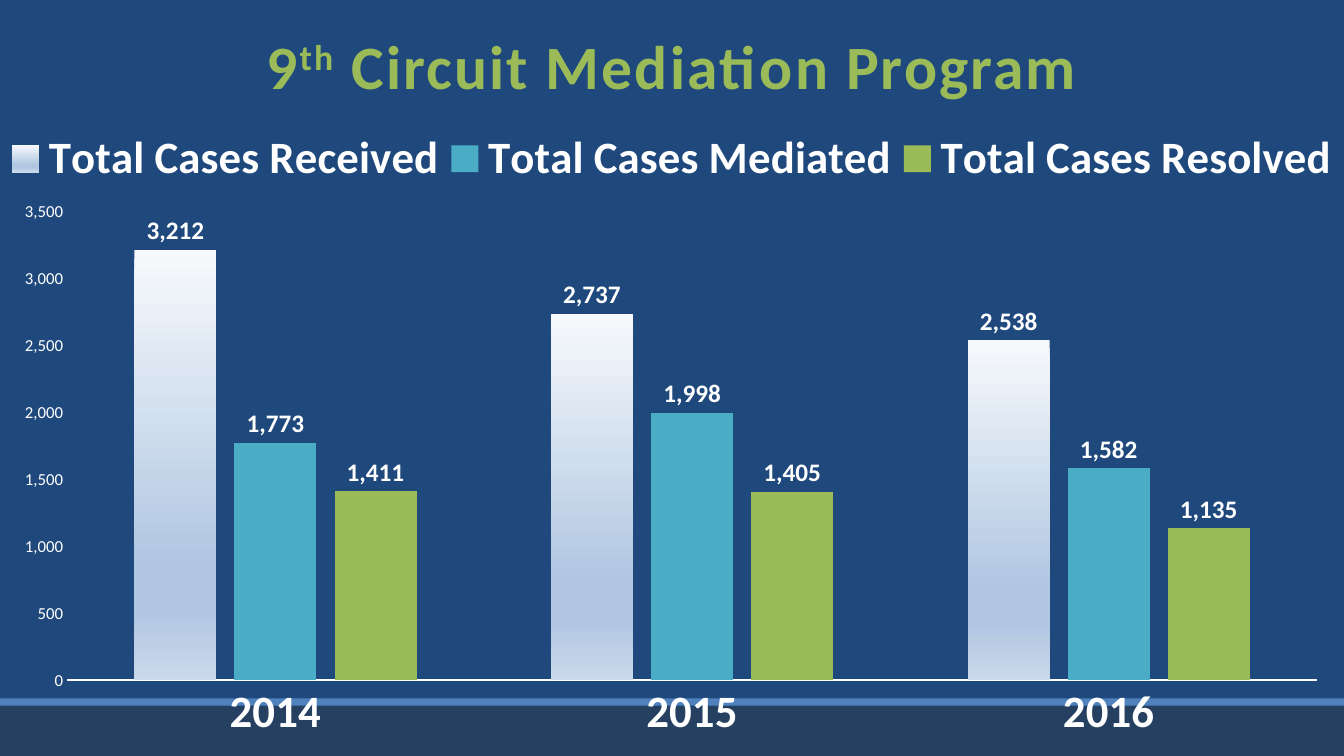
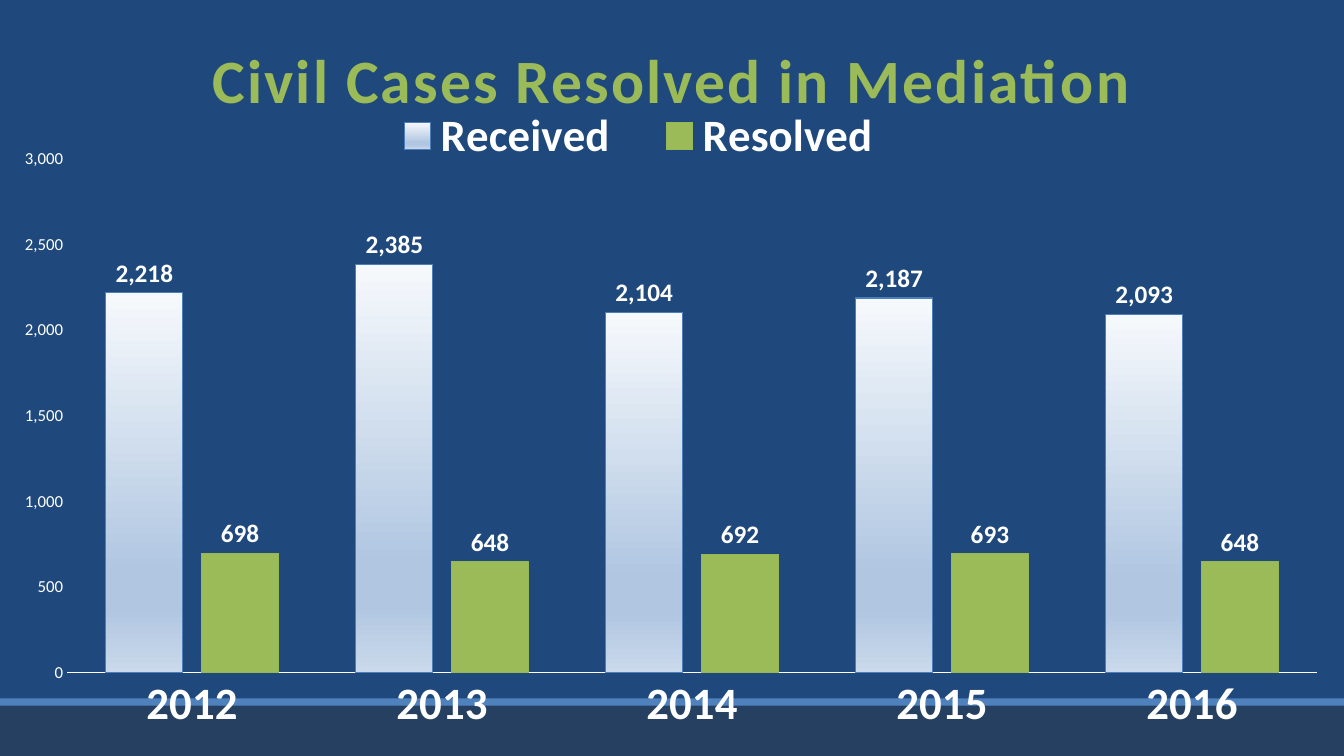
from dataclasses import dataclass
from typing import Optional

from lxml.etree import SubElement
from pptx import Presentation
from pptx.chart.data import CategoryChartData as ChartData
from pptx.dml.color import RGBColor
from pptx.enum.chart import XL_CHART_TYPE as Kind, XL_LABEL_POSITION as Pos
from pptx.enum.chart import XL_LEGEND_POSITION as Side, XL_TICK_MARK as Tick
from pptx.enum.shapes import MSO_SHAPE as Shape
from pptx.enum.text import MSO_ANCHOR as Anchor, PP_ALIGN as Align
from pptx.oxml.ns import qn
from pptx.util import Inches, Pt

# Shared look
WIDE, HIGH = 13.33, 7.5
FONT = "Calibri"
NAVY, DARK, BLUE = "1F497D", "254061", "4F81BD"
WHITE, GREEN, TEAL = "FFFFFF", "9BBB59", "4BACC6"
FADE = ((0, "F6F9FC"), (74, "B0C6E1"), (83, "B0C6E1"), (100, "CAD9EB"))

TITLE = dict(name=FONT, size=Pt(44), bold=True, color=GREEN)
BASE = dict(name=FONT, size=Pt(10), color=WHITE)
LARGE = dict(name=FONT, size=Pt(32), bold=True, color=WHITE)
SCALE = dict(name=FONT, size=Pt(12), bold=False, color=WHITE)
LABEL = dict(name=FONT, size=Pt(18), bold=True, color=WHITE)


@dataclass
class Band:
    top: float
    high: float
    color: str


@dataclass
class Series:
    name: str
    vals: tuple
    color: Optional[str] = None  # None means the shared fade
    edge: Optional[str] = None


@dataclass
class Box:
    """Place within a chart, as shares of its size."""
    x: float
    y: float
    w: float
    h: float


@dataclass
class Page:
    title: tuple  # (text, raised) pairs
    top: float
    years: tuple
    series: tuple
    peak: int
    gap: int
    lap: int
    line: float
    plot: Box
    key: Box


BANDS = (Band(7, 0.5, DARK), Band(6.93, 0.07, BLUE))

PAGES = (
    Page(
        title=(("9", False), ("th", True), (" Circuit Mediation Program", False)),
        top=0.24,
        years=("2014", "2015", "2016"),
        series=(
            Series("Total Cases Received", (3212, 2737, 2538)),
            Series("Total Cases Mediated", (1773, 1998, 1582), TEAL),
            Series("Total Cases Resolved", (1411, 1405, 1135), GREEN),
        ),
        peak=3500, gap=164, lap=-22, line=1.5,
        plot=Box(0.05, 0.28, 0.93, 0.62), key=Box(0, 0.17, 1, 0.08),
    ),
    Page(
        title=(("Civil Cases Resolved in Mediation", False),),
        top=0.38,
        years=("2012", "2013", "2014", "2015", "2016"),
        series=(
            Series("Received", (2218, 2385, 2104, 2187, 2093), edge="4D7EB9"),
            Series("Resolved", (698, 648, 692, 693, 648), GREEN, "98B757"),
        ),
        peak=3000, gap=100, lap=-24, line=0.75,
        plot=Box(0.05, 0.21, 0.93, 0.68), key=Box(0.27, 0.14, 0.41, 0.08),
    ),
)


def paint(item, color: str) -> None:
    """Give a fill one solid colour."""
    item.solid()
    item.fore_color.rgb = RGBColor.from_string(color)


def style(font, form: dict) -> None:
    for key, val in form.items():
        if key == "color":
            paint(font.fill, val)
        else:
            setattr(font, key, val)


def fade(fill, node) -> None:
    """Fill from top to bottom with the shared stops."""
    fill.gradient()
    fill.gradient_angle = 270
    stops = node.find(".//" + qn("a:gsLst"))
    for old in list(stops):
        stops.remove(old)
    for spot, color in FADE:
        stop = SubElement(stops, qn("a:gs"), pos=str(spot * 1000))
        SubElement(stop, qn("a:srgbClr"), val=color)


def place(node, box: Box, inner: bool = False) -> None:
    """Set a fixed layout on a plot area or legend."""
    old = node.find(qn("c:layout"))
    if old is not None:
        node.remove(old)
    frame = SubElement(node, qn("c:layout"))
    if inner:
        node.insert(0, frame)
    else:
        node.find(qn("c:legendPos")).addnext(frame)
    man = SubElement(frame, qn("c:manualLayout"))
    if inner:
        SubElement(man, qn("c:layoutTarget"), val="inner")
    for tag in ("xMode", "yMode"):
        SubElement(man, qn("c:" + tag), val="edge")
    for tag in ("x", "y", "w", "h"):
        SubElement(man, qn("c:" + tag), val=str(getattr(box, tag)))


def add_bands(slide, master) -> None:
    """Draw the foot bands and hand them to the master."""
    for num, band in enumerate(BANDS, 20):
        bar = slide.shapes.add_shape(
            Shape.RECTANGLE, 0, Inches(band.top), Inches(WIDE), Inches(band.high))
        bar.shadow.inherit = False
        paint(bar.fill, band.color)
        bar.line.fill.background()
        bar._element.nvSpPr.cNvPr.set("id", str(num))
        master.shapes._spTree.append(bar._element)


def add_title(slide, page: Page) -> None:
    head = slide.shapes.title
    head.left, head.top = 0, Inches(page.top)
    head.width, head.height = Inches(WIDE), Inches(0.8)
    frame = head.text_frame
    frame.vertical_anchor = Anchor.MIDDLE
    para = frame.paragraphs[0]
    para.alignment = Align.CENTER
    for text, raised in page.title:
        run = para.add_run()
        run.text = text
        style(run.font, TITLE)
        props = run._r.get_or_add_rPr()
        props.set("spc", "150")
        if raised:
            props.set("baseline", "30000")


def add_bars(plot, page: Page) -> None:
    plot.gap_width, plot.overlap, plot.vary_by_categories = page.gap, page.lap, False
    for bar, info in zip(plot.series, page.series):
        if info.color:
            paint(bar.format.fill, info.color)
        else:
            fade(bar.format.fill, bar._element)
        if info.edge:
            paint(bar.format.line.fill, info.edge)
            bar.format.line.width = Pt(0.75)
        else:
            bar.format.line.fill.background()
        tags = bar.data_labels
        form = dict(show_value=True, position=Pos.OUTSIDE_END,
                    number_format="#,##0", number_format_is_linked=False)
        for key, val in form.items():
            setattr(tags, key, val)
        style(tags.font, LABEL)


def add_chart(slide, page: Page) -> None:
    data = ChartData(number_format="#,##0")
    data.categories = page.years
    for info in page.series:
        data.add_series(info.name, info.vals)
    chart = slide.shapes.add_chart(
        Kind.COLUMN_CLUSTERED, 0, 0, Inches(WIDE), Inches(HIGH), data).chart
    chart.has_title = False
    style(chart.font, BASE)

    # Clear ground, so that the slide shows through
    space = chart._chartSpace
    ground = SubElement(space, qn("c:spPr"))
    SubElement(ground, qn("a:noFill"))
    SubElement(SubElement(ground, qn("a:ln")), qn("a:noFill"))
    space.find(qn("c:txPr")).addprevious(ground)

    # Axes
    years, scale = chart.category_axis, chart.value_axis
    for axis, form in ((years, LARGE), (scale, SCALE)):
        axis.major_tick_mark = axis.minor_tick_mark = Tick.NONE
        axis.has_major_gridlines = False
        style(axis.tick_labels.font, form)
    paint(years.format.line.fill, WHITE)
    years.format.line.width = Pt(page.line)
    scale.format.line.fill.background()
    scale.minimum_scale, scale.maximum_scale, scale.major_unit = 0, page.peak, 500
    scale.tick_labels.number_format = "#,##0"
    scale.tick_labels.number_format_is_linked = False

    # Bars and legend
    add_bars(chart.plots[0], page)
    chart.has_legend = True
    key = chart.legend
    key.position, key.include_in_layout = Side.TOP, False
    style(key.font, LARGE)
    place(key._element, page.key)
    place(space.chart.plotArea, page.plot, inner=True)


def main() -> None:
    deck = Presentation()
    deck.slide_width, deck.slide_height = Inches(WIDE), Inches(HIGH)
    master = deck.slide_master
    paint(master.background.fill, NAVY)
    for num, page in enumerate(PAGES):
        slide = deck.slides.add_slide(deck.slide_layouts[5])
        if num == 0:
            add_bands(slide, master)
        add_title(slide, page)
        add_chart(slide, page)
    deck.save("out.pptx")


if __name__ == "__main__":
    main()
